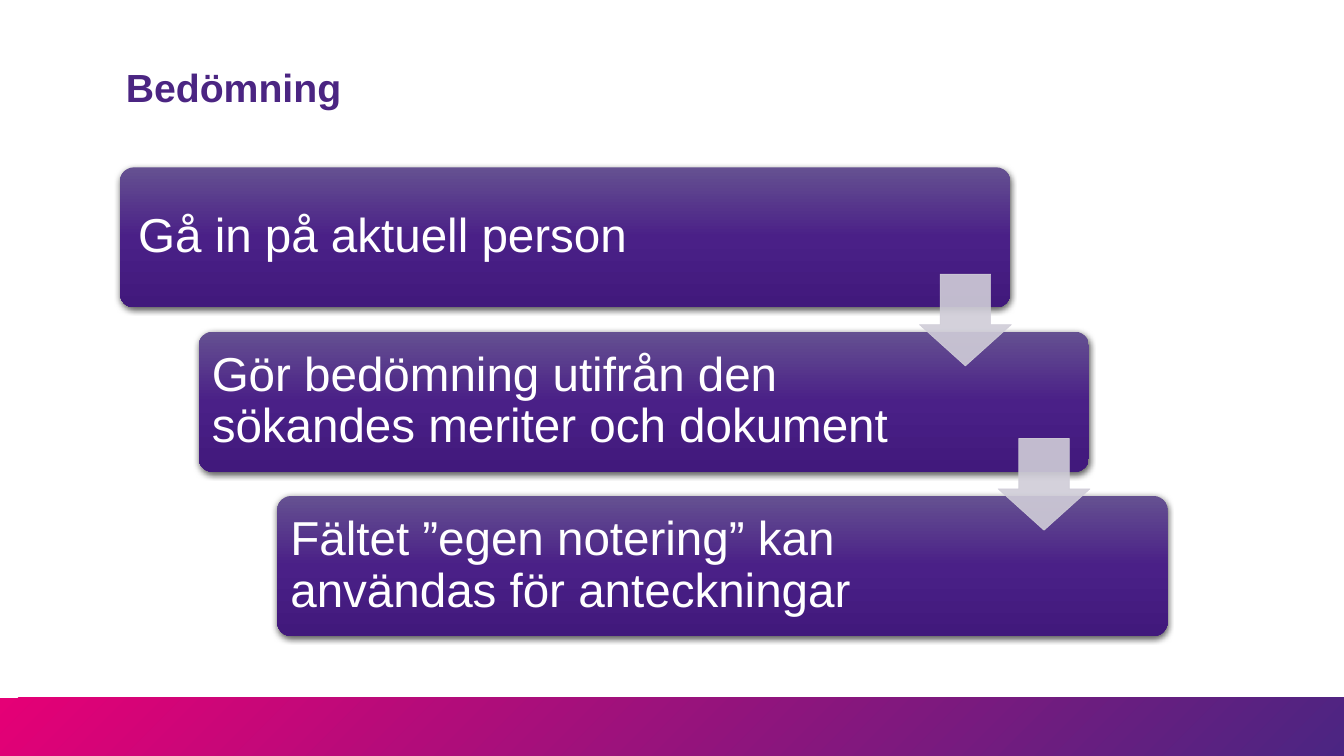
from dataclasses import dataclass

from lxml import etree
from pptx import Presentation
from pptx.dml.color import RGBColor
from pptx.enum.shapes import MSO_SHAPE
from pptx.enum.text import MSO_ANCHOR, PP_ALIGN
from pptx.oxml import parse_xml
from pptx.oxml.ns import nsdecls, qn
from pptx.shapes.autoshape import Shape
from pptx.slide import Slide
from pptx.util import Inches, Pt

RECT = MSO_SHAPE.RECTANGLE
ROUND = MSO_SHAPE.ROUNDED_RECTANGLE
DOWN = MSO_SHAPE.DOWN_ARROW
MIDDLE = MSO_ANCHOR.MIDDLE
LEFT = PP_ALIGN.LEFT


@dataclass(frozen=True)
class Theme:
    """Colours, font and type sizes of the slide."""
    font: str = "Arial"
    title: str = "4B2582"
    text: str = "FFFFFF"
    arrow: str = "D0CDD8"
    band: tuple[str, ...] = ("E50076", "4B2582")
    step: tuple[str, ...] = ("655191", "4A2087", "41197C")
    title_size: int = 28
    step_size: int = 34


@dataclass(frozen=True)
class Step:
    """Text of one step with its padding and right margin in inches."""
    text: str
    pad: float = 0.09
    right: float = 1.78


THEME = Theme()
STEPS = (
    Step("Gå in på aktuell person", 0.14, 1.56),
    Step("Gör bedömning utifrån den sökandes meriter och dokument"),
    Step("Fältet ”egen notering” kan användas för anteckningar"),
)
STEP_X, STEP_Y, STEP_W, STEP_H = 1.19, 1.66, 8.83, 1.39
SHIFT_X, SHIFT_Y = 0.78, 1.63
ARROW_X, ARROW_Y, ARROW_SIZE = 9.12, 2.72, 0.91


def add_form(slide: Slide, kind: MSO_SHAPE, x: float, y: float,
             w: float, h: float) -> Shape:
    """Add a preset shape without shadow."""
    shape = slide.shapes.add_shape(kind, Inches(x), Inches(y), Inches(w), Inches(h))
    shape.shadow.inherit = False
    return shape


def fill_grad(shape: Shape, shades: tuple[str, ...], angle: int) -> None:
    """Fill a shape with evenly spaced shades and hide its line."""
    shape.line.fill.background()
    shape.fill.background()
    last = len(shades) - 1
    stops = "".join(
        f'<a:gs pos="{100000 * i // last}"><a:srgbClr val="{shade}"/></a:gs>'
        for i, shade in enumerate(shades))
    grad = parse_xml(
        f'<a:gradFill {nsdecls("a")} rotWithShape="1"><a:gsLst>{stops}</a:gsLst>'
        f'<a:lin ang="{angle * 60000}" scaled="0"/></a:gradFill>')
    props = shape.element.spPr
    props.replace(props.find(qn("a:noFill")), grad)


def add_shadow(shape: Shape) -> None:
    """Give a shape a soft shadow below it."""
    effects = shape.element.spPr.find(qn("a:effectLst"))
    effects.append(parse_xml(
        f'<a:outerShdw {nsdecls("a")} blurRad="{Pt(4.5)}" dist="{Pt(1.5)}" '
        'dir="5400000" rotWithShape="0"><a:srgbClr val="000000">'
        '<a:alpha val="63000"/></a:srgbClr></a:outerShdw>'))


def set_text(shape: Shape, text: str, size: int, shade: str,
             bold: bool = False) -> None:
    """Write one wrapped paragraph, centred vertically."""
    frame = shape.text_frame
    frame.word_wrap = True
    frame.vertical_anchor = MIDDLE
    para = frame.paragraphs[0]
    para.text = text
    para.alignment = LEFT
    para.line_spacing = 0.9
    font = para.font
    font.name, font.size, font.bold = THEME.font, Pt(size), bold
    font.color.rgb = RGBColor.from_string(shade)


def add_step(slide: Slide, step: Step, x: float, y: float) -> None:
    """Draw a step box with its text."""
    box = add_form(slide, ROUND, x, y, STEP_W, STEP_H)
    box.adjustments[0] = 0.1
    fill_grad(box, THEME.step, 90)
    add_shadow(box)
    set_text(box, step.text, THEME.step_size, THEME.text)
    frame = box.text_frame
    frame.margin_left = frame.margin_top = frame.margin_bottom = Inches(step.pad)
    frame.margin_right = Inches(step.right)


def add_arrow(slide: Slide, x: float, y: float) -> None:
    """Draw a slightly transparent arrow to the next step."""
    arrow = add_form(slide, DOWN, x, y, ARROW_SIZE, ARROW_SIZE)
    arrow.adjustments[0], arrow.adjustments[1] = 0.55, 0.45
    arrow.line.width = Pt(0.5)
    for fill in (arrow.fill, arrow.line.fill):
        fill.solid()
        fill.fore_color.rgb = RGBColor.from_string(THEME.arrow)
    for shade in arrow.element.spPr.iter(qn("a:srgbClr")):
        etree.SubElement(shade, qn("a:alpha"), val="90000")


def main() -> None:
    """Build and save the slide."""
    deck = Presentation()
    deck.slide_width, deck.slide_height = Inches(13.33), Inches(7.5)
    slide = deck.slides.add_slide(deck.slide_layouts[6])
    band = add_form(slide, RECT, 0, 6.92, 13.33, 0.58)
    fill_grad(band, THEME.band, 45)
    for i, step in enumerate(STEPS):
        add_step(slide, step, STEP_X + i * SHIFT_X, STEP_Y + i * SHIFT_Y)
    for i in range(len(STEPS) - 1):
        add_arrow(slide, ARROW_X + i * SHIFT_X, ARROW_Y + i * SHIFT_Y)
    title = slide.shapes.add_textbox(
        Inches(1.15), Inches(0.59), Inches(9.85), Inches(0.6))
    set_text(title, "Bedömning", THEME.title_size, THEME.title, bold=True)
    deck.save("out.pptx")


if __name__ == "__main__":
    main()
